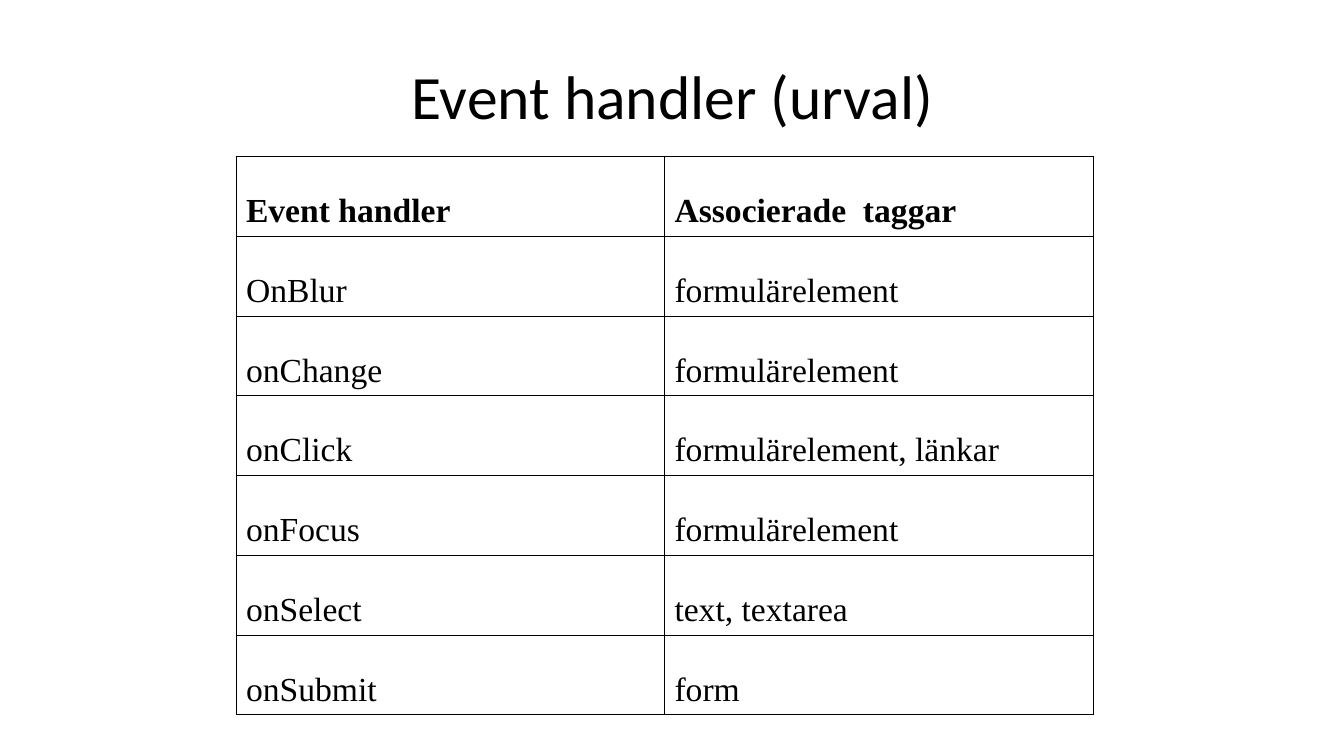
from lxml import etree
from pptx import Presentation
from pptx.dml.color import RGBColor
from pptx.enum.text import MSO_ANCHOR, PP_ALIGN
from pptx.oxml.ns import qn
from pptx.util import Inches, Pt

CENTER, LEFT = PP_ALIGN.CENTER, PP_ALIGN.LEFT
MIDDLE, TOP = MSO_ANCHOR.MIDDLE, MSO_ANCHOR.TOP
TITLE_ONLY = 5
BLACK = "000000"
THIN, THICK = 0.23, 0.45

# Formats
TITLE_FONT = {"name": "Calibri", "size": Pt(44), "bold": False}
TITLE_PARA = {"alignment": CENTER, "line_spacing": 0.9}
CELL_FONT = {"name": "Times New Roman", "size": Pt(24)}
CELL_PARA = {"alignment": LEFT, "line_spacing": 0.64, "space_before": Pt(4)}
CELL_BOX = {
    "margin_left": Inches(0.1), "margin_top": Inches(0.47),
    "margin_right": Inches(0.1), "margin_bottom": Inches(0.05),
    "vertical_anchor": TOP,
}

# Table content
ROWS = [
    ("Event handler", "Associerade  taggar"),
    ("OnBlur", "formulärelement"),
    ("onChange", "formulärelement"),
    ("onClick", "formulärelement, länkar"),
    ("onFocus", "formulärelement"),
    ("onSelect", "text, textarea"),
    ("onSubmit", "form"),
]
TABLE_WIDTH, TABLE_HEIGHT = 8.5, 5.54


def color(hex_value):
    return RGBColor.from_string(hex_value)


def apply(obj, formats):
    for name, value in formats.items():
        setattr(obj, name, value)


def write(tf, text, font, para):
    p = tf.paragraphs[0]
    apply(p, para)
    r = p.add_run()
    r.text = text
    apply(r.font, font)
    r.font.color.rgb = color(BLACK)


def set_borders(cell, widths):
    """Draw the cell sides given as a dict of tag to width in points."""
    tc_pr = cell._tc.get_or_add_tcPr()
    for i, (tag, width) in enumerate(widths.items()):
        ln = etree.Element(qn(f"a:{tag}"), w=str(Pt(width)))
        fill = etree.SubElement(ln, qn("a:solidFill"))
        etree.SubElement(fill, qn("a:srgbClr"), val=BLACK)
        tc_pr.insert(i, ln)


def add_title(slide, text):
    sp = slide.shapes.title
    apply(sp, {"left": Inches(2.42), "top": Inches(0.36),
               "width": Inches(8.5), "height": Inches(1.25)})
    tf = sp.text_frame
    apply(tf, {"vertical_anchor": MIDDLE, "word_wrap": True})
    write(tf, text, TITLE_FONT, TITLE_PARA)


def add_handler_table(slide, rows):
    n_rows, n_cols = len(rows), len(rows[0])
    table = slide.shapes.add_table(
        n_rows, n_cols, Inches(2.34), Inches(1.55),
        Inches(TABLE_WIDTH), Inches(TABLE_HEIGHT)).table
    apply(table, {"first_row": False, "horz_banding": False})
    for i, row in enumerate(rows):
        for j, text in enumerate(row):
            cell = table.cell(i, j)
            apply(cell, CELL_BOX)
            cell.fill.background()
            # Heavier lines on the left, top and right of the table
            set_borders(cell, {
                "lnL": THICK if j == 0 else THIN,
                "lnR": THICK if j == n_cols - 1 else THIN,
                "lnT": THICK if i == 0 else THIN,
                "lnB": THIN,
            })
            write(cell.text_frame, text, {**CELL_FONT, "bold": i == 0}, CELL_PARA)


def main():
    prs = Presentation()
    apply(prs, {"slide_width": Inches(13.33), "slide_height": Inches(7.5)})
    slide = prs.slides.add_slide(prs.slide_layouts[TITLE_ONLY])
    add_title(slide, "Event handler (urval)")
    add_handler_table(slide, ROWS)
    prs.save("out.pptx")


if __name__ == "__main__":
    main()
